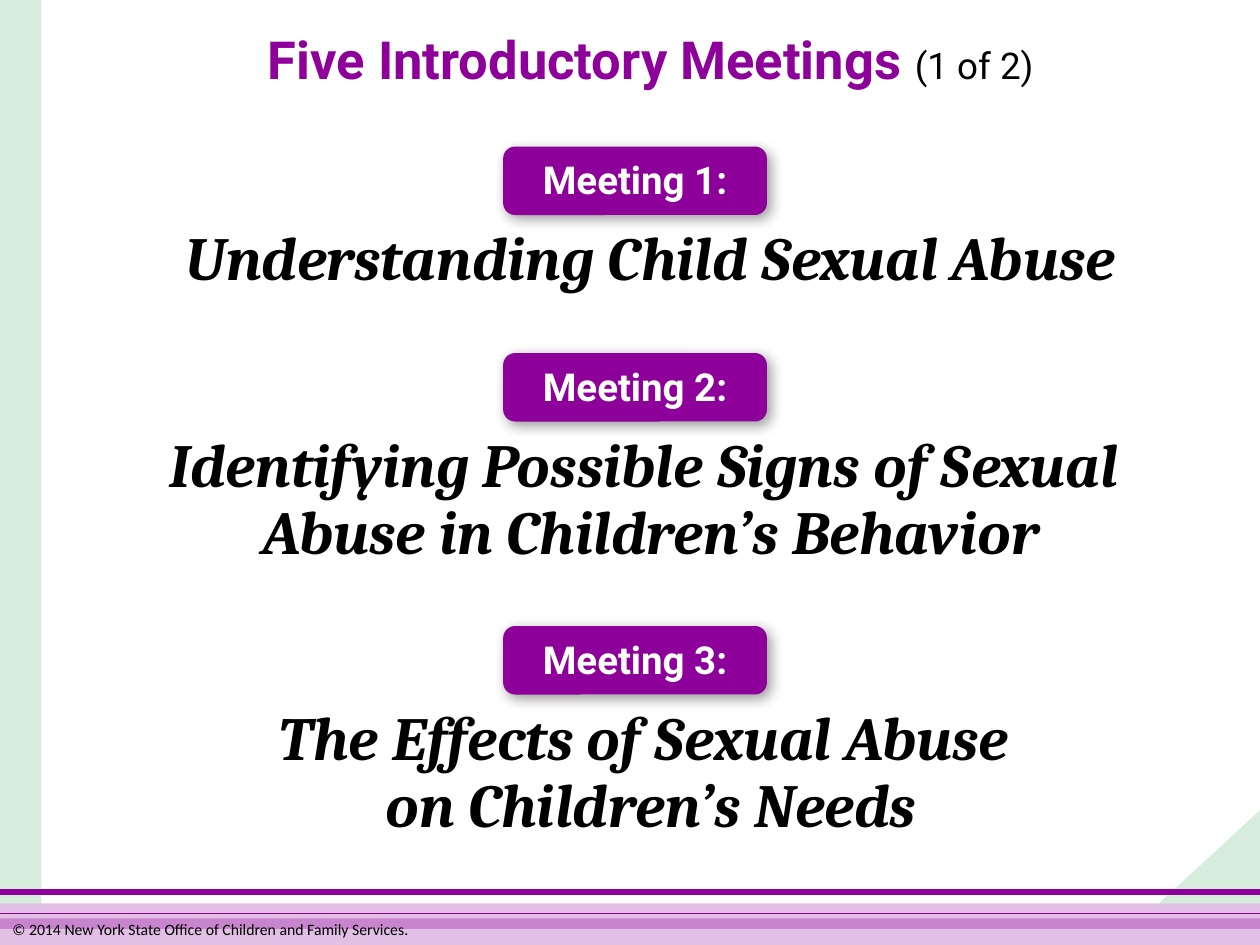
from lxml.etree import SubElement
from pptx import Presentation
from pptx.dml.color import RGBColor
from pptx.enum.shapes import MSO_CONNECTOR, MSO_SHAPE
from pptx.enum.text import MSO_ANCHOR, PP_ALIGN
from pptx.oxml.ns import qn
from pptx.util import Inches, Pt

PURPLE, MINT, LILAC = "8D0099", "D6EDDD", "E2BFE5"
BLACK, WHITE = "000000", "FFFFFF"
TITLE = [("Five Introductory Meetings ", 30, PURPLE, True),
         ("(1 of 2)", 21, BLACK, False)]
MEETINGS = [
    ("Meeting 1:", "Understanding Child Sexual Abuse"),
    ("Meeting 2:", "Identifying Possible Signs of Sexual \vAbuse in Children’s Behavior"),
    ("Meeting 3:", "The Effects of Sexual Abuse \von Children’s Needs"),
]
FOOTER = "© 2014 New York State Office of Children and Family Services."
RULES = [(7.08, 3, None), (7.33, 6, 30), (7.25, 0.75, None)]
LEADING, GAP = 38, 80

deck = Presentation()
deck.slide_width, deck.slide_height = Inches(10), Inches(7.5)
slide = deck.slides.add_slide(deck.slide_layouts[6])
shapes = slide.shapes


def paint(item, color):
    item.rgb = RGBColor.from_string(color)


def block(kind, box, color):
    shape = shapes.add_shape(kind, *map(Inches, box))
    shape.shadow.inherit = False
    shape.fill.solid()
    paint(shape.fill.fore_color, color)
    shape.line.fill.background()
    return shape


def alpha(fill, value):
    node = fill.find(".//" + qn("a:srgbClr"))
    SubElement(node, qn("a:alpha"), val=str(value * 1000))


def rule(top, width, value):
    line = shapes.add_connector(MSO_CONNECTOR.STRAIGHT, Inches(10), Inches(top),
                                Inches(0), Inches(top))
    line.line.width = Pt(width)
    paint(line.line.color, PURPLE)
    props = line._element.spPr
    SubElement(props, qn("a:effectLst"))
    if value:
        alpha(props, value)


def cast(shape):
    effect = shape._element.spPr.find(qn("a:effectLst"))
    shadow = SubElement(effect, qn("a:outerShdw"), blurRad=str(Pt(8)),
                        dist=str(Pt(3)), dir=str(45 * 60000),
                        algn="tl", rotWithShape="0")
    SubElement(shadow, qn("a:srgbClr"), val=BLACK)
    alpha(effect, 40)


def frame(box):
    text = shapes.add_textbox(*map(Inches, box)).text_frame
    text.word_wrap = True
    return text


def style(run, font, size, color, bold=False, italic=False):
    run.font.name, run.font.size = font, Pt(size)
    run.font.bold, run.font.italic = bold, italic
    paint(run.font.color, color)


corner = block(MSO_SHAPE.RIGHT_TRIANGLE, (8.88, 6.38, 1.08, 1.17), MINT)
corner.rotation = 270
block(MSO_SHAPE.RECTANGLE, (0, 0, 0.33, 7.5), MINT)
block(MSO_SHAPE.RECTANGLE, (0, 7.17, 10, 0.33), LILAC)
for spec_row in RULES:
    rule(*spec_row)

foot = frame((0, 7.25, 10, 0.25))
foot.text = FOOTER
style(foot.paragraphs[0].runs[0], "Calibri", 9, BLACK)

head = frame((0.33, -0.08, 9.67, 1.17))
head.vertical_anchor = MSO_ANCHOR.MIDDLE
para = head.paragraphs[0]
para.alignment, para.line_spacing = PP_ALIGN.CENTER, Pt(30)
for words, size, color, bold in TITLE:
    run = para.add_run()
    run.text = words
    style(run, "Roboto", size, color, bold)

body = frame((0.33, 1.75, 9.67, 5.12))
body.text = "\n".join(topic for label, topic in MEETINGS)
for para in body.paragraphs:
    para.alignment = PP_ALIGN.CENTER
    para.line_spacing, para.space_after = Pt(LEADING), Pt(GAP)
    for run in para.runs:
        style(run, "Cambria", 35, BLACK, True, True)

top = 1.17
for label, topic in MEETINGS:
    pill = block(MSO_SHAPE.ROUNDED_RECTANGLE, (4, top, 2.08, 0.53), PURPLE)
    pill.line.width = Pt(1)
    paint(pill.line.color, PURPLE)
    cast(pill)
    text = frame((3.97, top + 0.02, 2.14, 0.47))
    text.text = label
    para = text.paragraphs[0]
    para.alignment = PP_ALIGN.CENTER
    style(para.runs[0], "Roboto", 22, WHITE, True)
    lines = topic.count("\v") + 1
    top += (lines * LEADING + GAP) / 72

deck.save("out.pptx")
